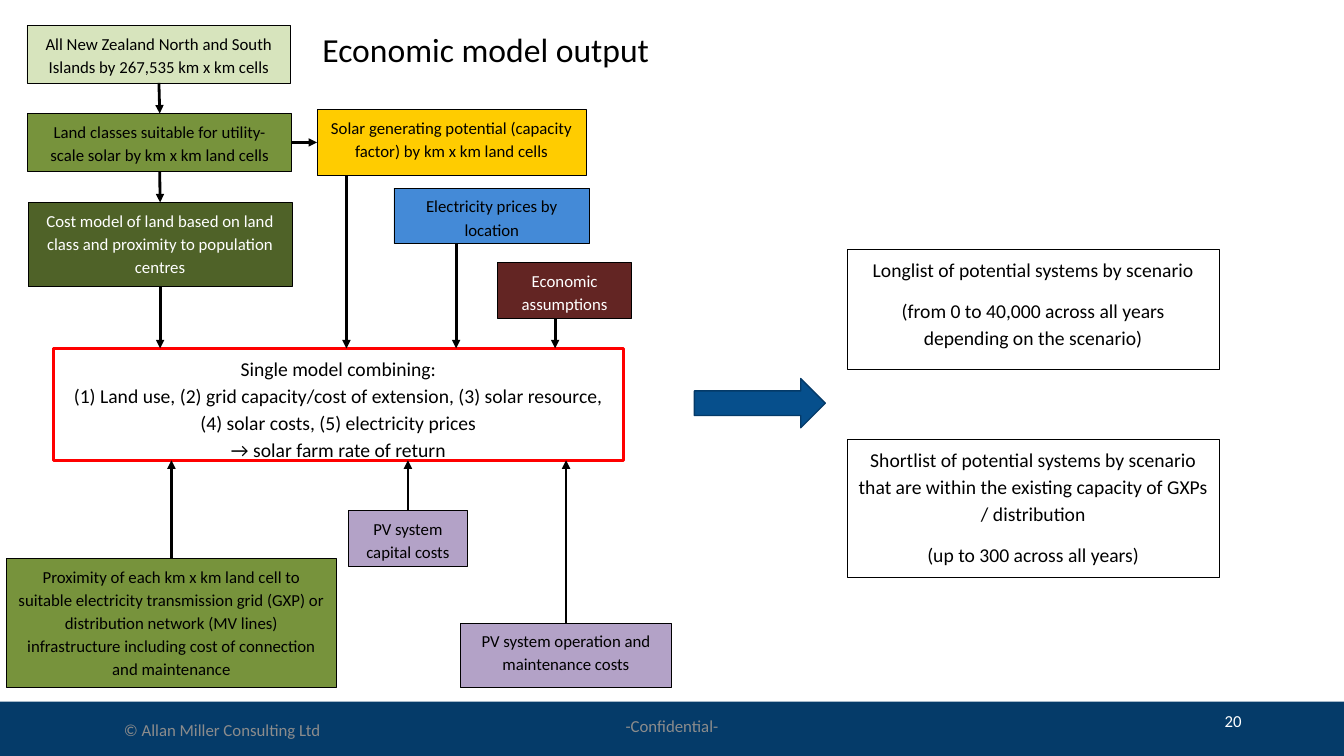
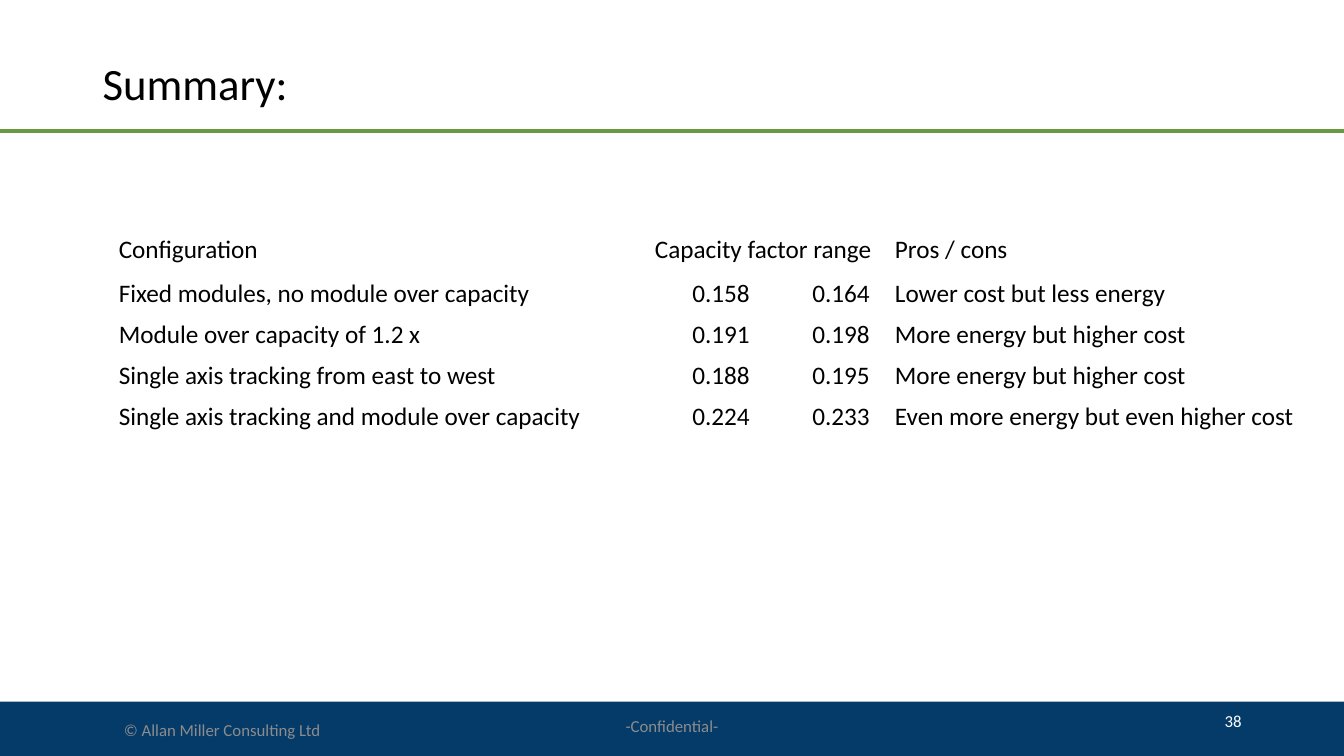
import dataclasses

import lxml.etree
import pptx
import pptx.dml.color
import pptx.enum.shapes
import pptx.enum.text
import pptx.oxml.ns
import pptx.util

Cm = pptx.util.Cm
Pt = pptx.util.Pt
SHAPE = pptx.enum.shapes.MSO_SHAPE
LINE = pptx.enum.shapes.MSO_CONNECTOR.STRAIGHT
ALIGN = pptx.enum.text.PP_ALIGN
ANCHOR = pptx.enum.text.MSO_ANCHOR
TOP, LEFT, BOTTOM, RIGHT = range(4)


@dataclasses.dataclass(frozen=True)
class Theme:
    font: str = "Calibri"
    # Colours
    black: str = "000000"
    white: str = "FFFFFF"
    grey: str = "8C8C8C"
    navy: str = "053B69"
    rule: str = "689B41"
    red: str = "FF0000"
    pale: str = "D7E4BD"
    green: str = "77933C"
    dark: str = "4F6228"
    gold: str = "FFCC00"
    blue: str = "448AD7"
    wine: str = "632523"
    mauve: str = "B3A2C7"
    arrow: str = "064F8C"
    edge: str = "043A68"
    # Type sizes
    small: int = 12
    body: int = 14
    table: int = 18
    head: int = 24
    title: int = 32


T = Theme()


@dataclasses.dataclass(frozen=True)
class Box:
    """A region in centimetres."""
    x: float
    y: float
    w: float
    h: float

    def sub(self, x, y, w, h):
        return Box(self.x + x, self.y + y, w, h)

    def cm(self):
        return Cm(self.x), Cm(self.y), Cm(self.w), Cm(self.h)


PAGE = Box(0, 0, 33.87, 19.05)
BAND = PAGE.sub(0, 17.68, 33.87, 1.37)


def rgb(color):
    return pptx.dml.color.RGBColor.from_string(color)


def style(para, size, color, align=ALIGN.LEFT):
    para.alignment = align
    para.font.name = T.font
    para.font.size = Pt(size)
    para.font.color.rgb = rgb(color)


def add_box(slide, box, fill, line=None, width=0.5, kind=SHAPE.RECTANGLE):
    shape = slide.shapes.add_shape(kind, *box.cm())
    shape.shadow.inherit = False
    shape.fill.solid()
    shape.fill.fore_color.rgb = rgb(fill)
    if line:
        shape.line.color.rgb = rgb(line)
        shape.line.width = Pt(width)
    else:
        shape.line.fill.background()
    return shape


def fill_text(shape, lines, size, color=T.black, after=10):
    frame = shape.text_frame
    frame.word_wrap = True
    frame.vertical_anchor = ANCHOR.TOP
    frame.text = "\n".join(lines)
    for para in frame.paragraphs:
        style(para, size, color, ALIGN.CENTER)
        para.line_spacing = 1.15
        para.space_after = Pt(after)


def add_line(slide, start, end, color, width, arrow=False):
    line = slide.shapes.add_connector(LINE, *(Cm(v) for v in (*start, *end)))
    line.line.color.rgb = rgb(color)
    line.line.width = Pt(width)
    qn = pptx.oxml.ns.qn
    if arrow:
        stroke = line.line._get_or_add_ln()
        lxml.etree.SubElement(stroke, qn("a:tailEnd"), type="triangle")
    lxml.etree.SubElement(line._element.spPr, qn("a:effectLst"))
    return line


def add_title(slide, box, text, size):
    title = slide.shapes.title
    title.left, title.top, title.width, title.height = box.cm()
    frame = title.text_frame
    frame.text = text
    frame.auto_size = pptx.enum.text.MSO_AUTO_SIZE.NONE
    frame.vertical_anchor = ANCHOR.MIDDLE
    para = frame.paragraphs[0]
    style(para, size, T.black)
    para.line_spacing = 0.9


def add_footer(slide, box, number):
    add_box(slide, box, T.navy)
    parts = [
        ((0.62, 0.31, 9.96, 0.79), "© Allan Miller Consulting Ltd", T.grey, ALIGN.CENTER),
        ((11.12, 0.23, 11.63, 0.76), "-Confidential-", T.grey, ALIGN.CENTER),
        ((23.92, -0.02, 7.62, 1.02), number, T.white, ALIGN.RIGHT),
    ]
    for place, text, color, align in parts:
        frame = slide.shapes.add_textbox(*box.sub(*place).cm()).text_frame
        frame.word_wrap = True
        frame.vertical_anchor = ANCHOR.MIDDLE
        frame.text = text
        style(frame.paragraphs[0], T.small, color, align)


def add_flow(slide, box):
    # Central model
    hub = box.sub(1.17, 8.5, 14.38, 2.82)
    shape = add_box(slide, hub, T.white, T.red, 2.25)
    fill_text(shape, [
        "Single model combining:",
        "(1) Land use, (2) grid capacity/cost of extension, (3) solar resource, "
        "(4) solar costs, (5) electricity prices",
        "→ solar farm rate of return",
    ], T.body, after=0)

    # Inputs: place, fill, text colour, text
    inputs = {
        "cells": ((0.51, 0.36, 6.65, 1.45), T.pale, T.black,
                  "All New Zealand North and South Islands by 267,535 km x km cells"),
        "land": ((0.53, 2.58, 6.65, 1.46), T.green, T.black,
                 "Land classes suitable for utility-scale solar by km x km land cells"),
        "cost": ((0.54, 4.82, 6.65, 2.13), T.dark, T.white,
                 "Cost model of land based on land class and proximity to "
                 "population centres"),
        "solar": ((7.82, 2.48, 6.78, 1.66), T.gold, T.black,
                  "Solar generating potential (capacity factor) by km x km land cells"),
        "price": ((9.76, 4.46, 4.93, 1.4), T.blue, T.black,
                  "Electricity prices by location"),
        "terms": ((12.37, 6.34, 3.38, 1.4), T.wine, T.white,
                  "Economic assumptions"),
        "grid": ((0, 13.79, 8.3, 3.25), T.green, T.black,
                 "Proximity of each km x km land cell to suitable electricity "
                 "transmission grid (GXP) or distribution network (MV lines) "
                 "infrastructure including cost of connection and maintenance"),
        "build": ((8.61, 12.58, 3, 1.42), T.mauve, T.black,
                  "PV system capital costs"),
        "upkeep": ((11.43, 15.42, 5.33, 1.63), T.mauve, T.black,
                   "PV system operation and maintenance costs"),
    }
    nodes = {}
    for name, (place, fill, color, text) in inputs.items():
        area = box.sub(*place)
        shape = add_box(slide, area, fill, T.black)
        fill_text(shape, [text], T.small, color)
        nodes[name] = area, shape

    # Links between inputs
    for tail, side, head, end in [("cells", BOTTOM, "land", TOP),
                                  ("land", BOTTOM, "cost", TOP),
                                  ("land", RIGHT, "solar", LEFT)]:
        link = add_line(slide, (0, 0), (0, 0), T.black, 2, arrow=True)
        link.begin_connect(nodes[tail][1], side)
        link.end_connect(nodes[head][1], end)

    # Links into the model; an offset marks a start away from the middle
    for name, shift in [("cost", 0), ("solar", -2.65), ("price", -0.9),
                        ("terms", -0.24), ("grid", 0), ("build", 0),
                        ("upkeep", 0)]:
        area, shape = nodes[name]
        x = area.x + area.w / 2 + shift
        above = area.y < hub.y
        start = area.y + area.h if above else area.y
        end = hub.y if above else hub.y + hub.h
        link = add_line(slide, (x, start), (x, end), T.black, 2, arrow=True)
        if not shift:
            link.begin_connect(shape, BOTTOM if above else TOP)


def add_results(slide, box):
    add_box(slide, box.sub(0, 3.25, 3.3, 1.24), T.arrow, T.edge, 1,
            SHAPE.RIGHT_ARROW)
    lists = [
        (0, 3.02, ["Longlist of potential systems by scenario",
                   "(from 0 to 40,000 across all years depending on the scenario)"]),
        (4.79, 3.47, ["Shortlist of potential systems by scenario that are within "
                      "the existing capacity of GXPs / distribution",
                      "(up to 300 across all years)"]),
    ]
    for y, high, lines in lists:
        shape = add_box(slide, box.sub(3.86, y, 9.36, high), T.white, T.black)
        fill_text(shape, lines, T.body)


def add_table(slide, box):
    rows = [
        ("Configuration", "Capacity factor range", "", "Pros / cons"),
        ("Fixed modules, no module over capacity", "0.158", "0.164",
         "Lower cost but less energy"),
        ("Module over capacity of 1.2 x", "0.191", "0.198",
         "More energy but higher cost"),
        ("Single axis tracking from east to west", "0.188", "0.195",
         "More energy but higher cost"),
        ("Single axis tracking and module over capacity", "0.224", "0.233",
         "Even more energy but even higher cost"),
    ]
    rows += [("",) * 4] * 3  # open rows at the foot
    table = slide.shapes.add_table(len(rows), 4, *box.cm()).table
    table.first_row = table.horz_banding = False
    for col, wide in zip(table.columns, (13.51, 3.84, 2.21, 11.15)):
        col.width = Cm(wide)
    for r, row in enumerate(rows):
        table.rows[r].height = Cm(1.03 if r else 1.13)
        for c, text in enumerate(row):
            cell = table.cell(r, c)
            cell.fill.background()
            cell.text = text
            middle = r > 0 and c in (1, 2)
            style(cell.text_frame.paragraphs[0], T.table, T.black,
                  ALIGN.CENTER if middle else ALIGN.LEFT)
    table.cell(0, 1).merge(table.cell(0, 2))


def new_slide(deck, number):
    slide = deck.slides.add_slide(deck.slide_layouts[5])
    add_footer(slide, BAND, number)
    return slide


def model_slide(deck):
    slide = new_slide(deck, "20")
    add_title(slide, PAGE.sub(7.87, 0.15, 23.27, 2.29),
              "Economic model output", T.head)
    add_flow(slide, PAGE.sub(0.17, 0.28, 16.76, 17.04))
    add_results(slide, PAGE.sub(17.5, 6.29, 13.22, 8.26))


def summary_slide(deck):
    slide = new_slide(deck, "38")
    add_line(slide, (0, 3.3), (PAGE.w, 3.3), T.rule, 3)
    add_title(slide, PAGE.sub(2.33, 1.02, 23.27, 2.29), "Summary:", T.title)
    add_table(slide, PAGE.sub(2.74, 5.77, 30.71, 8.34))


def main():
    deck = pptx.Presentation()
    deck.slide_width, deck.slide_height = Cm(PAGE.w), Cm(PAGE.h)
    model_slide(deck)
    summary_slide(deck)
    deck.save("out.pptx")


if __name__ == "__main__":
    main()
